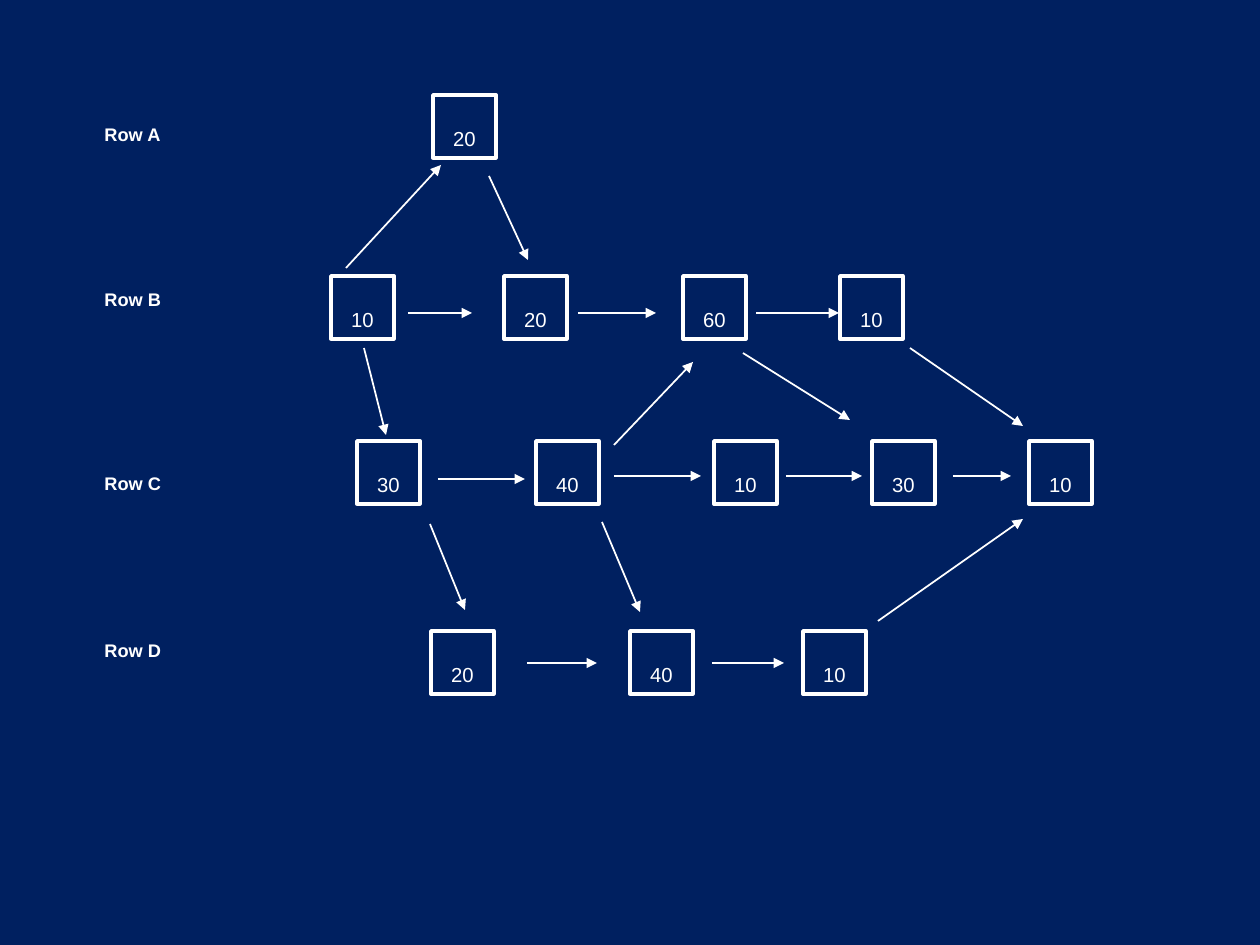
from lxml import etree
from pptx import Presentation
from pptx import util as u
from pptx.dml.color import RGBColor
from pptx.enum import shapes, text
from pptx.oxml.ns import qn

WHITE = RGBColor(0xFF, 0xFF, 0xFF)
NAVY = RGBColor(0x00, 0x20, 0x60)
SCALE = 914400 / 126
BOX_SIZE = 63

LABELS = [("Row A", 96), ("Row B", 261), ("Row C", 445), ("Row D", 612)]
BOX_ROWS = [
    (95, [(433, "20")]),
    (276, [(331, "10"), (504, "20"), (683, "60"), (840, "10")]),
    (441, [(357, "30"), (536, "40"), (714, "10"), (872, "30"), (1029, "10")]),
    (631, [(431, "20"), (630, "40"), (803, "10")]),
]
LEVEL_ARROWS = [
    (313, [(408, 472), (578, 656), (756, 839)]),
    (479, [(438, 525)]),
    (476, [(614, 701), (786, 862), (953, 1011)]),
    (663, [(527, 597), (712, 784)]),
]
SLANTED_ARROWS = [
    (346, 268, 441, 165),
    (489, 176, 528, 260),
    (364, 348, 386, 435),
    (614, 445, 693, 362),
    (743, 353, 850, 420),
    (910, 348, 1023, 426),
    (430, 524, 465, 610),
    (602, 522, 640, 612),
    (878, 621, 1023, 519),
]


def px(*lengths):
    return [u.Emu(round(length * SCALE)) for length in lengths]


class Diagram:
    font = "Arial"
    colour = WHITE

    def __init__(self, slide):
        self.slide = slide
        fill = slide.background.fill
        fill.solid()
        fill.fore_color.rgb = NAVY

    def add_words(self, shape, words, size, alignment, bold=False):
        paragraph = shape.text_frame.paragraphs[0]
        paragraph.alignment = alignment
        run = paragraph.add_run()
        run.text = words
        run._r.get_or_add_rPr().set("baseline", "-25000")
        font = paragraph.font
        font.name = self.font
        font.size = u.Pt(size)
        font.bold = bold
        font.color.rgb = self.colour
        spacing = etree.Element(qn("a:spcBef"))
        etree.SubElement(spacing, qn("a:spcPct"), val="50000")
        paragraph._p.get_or_add_pPr().insert(0, spacing)

    def label(self, words, top):
        shape = self.slide.shapes.add_textbox(*px(92, top, 92, 38))
        shape.text_frame.word_wrap = False
        shape.text_frame.auto_size = text.MSO_AUTO_SIZE.SHAPE_TO_FIT_TEXT
        self.add_words(shape, words, 18, text.PP_ALIGN.LEFT, bold=True)

    def box(self, number, left, top):
        shape = self.slide.shapes.add_shape(
            shapes.MSO_SHAPE.RECTANGLE, *px(left, top, BOX_SIZE, BOX_SIZE))
        shape.shadow.inherit = False
        shape.fill.background()
        shape.line.color.rgb = self.colour
        shape.line.width = u.Pt(2)
        shape.text_frame.vertical_anchor = text.MSO_ANCHOR.MIDDLE
        self.add_words(shape, number, 20, text.PP_ALIGN.CENTER)

    def arrow(self, *ends):
        connector = self.slide.shapes.add_connector(
            shapes.MSO_CONNECTOR.STRAIGHT, *px(*ends))
        connector.line.color.rgb = self.colour
        connector.line.width = u.Pt(1)
        outline = connector.line._get_or_add_ln()
        etree.SubElement(outline, qn("a:tailEnd"), type="triangle")
        etree.SubElement(connector._element.spPr, qn("a:effectLst"))


def main():
    presentation = Presentation()
    presentation.slide_width = u.Inches(10)
    presentation.slide_height = u.Inches(7.5)
    diagram = Diagram(presentation.slides.add_slide(presentation.slide_layouts[6]))

    for y, spans in LEVEL_ARROWS:
        for start, end in spans:
            diagram.arrow(start, y, end, y)
    for ends in SLANTED_ARROWS:
        diagram.arrow(*ends)
    for words, top in LABELS:
        diagram.label(words, top)
    for top, boxes in BOX_ROWS:
        for left, number in boxes:
            diagram.box(number, left, top)

    presentation.save("out.pptx")


if __name__ == "__main__":
    main()
